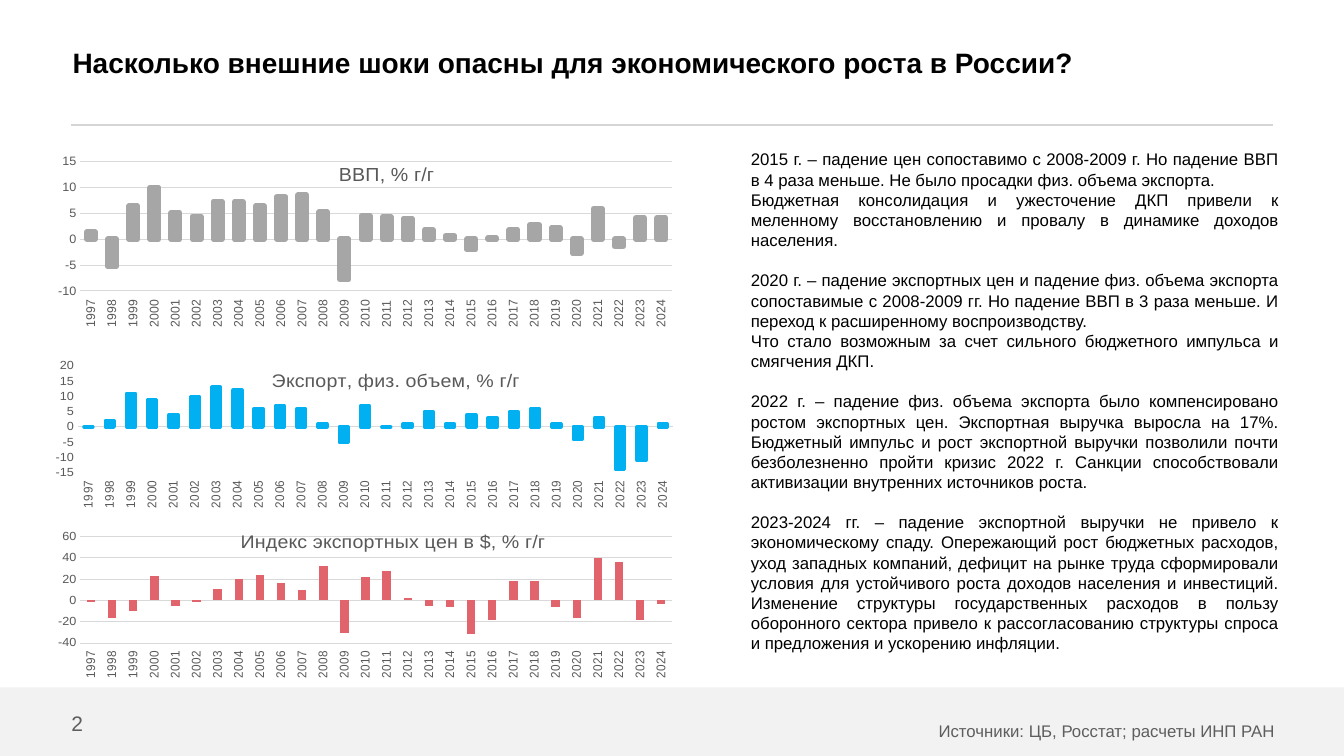
import dataclasses
from typing import Any, Optional

import lxml.etree
import pptx
import pptx.chart.data
import pptx.dml.color
import pptx.enum.chart
import pptx.enum.shapes
import pptx.enum.text
import pptx.oxml.ns
import pptx.util

Pt = pptx.util.Pt
RGBColor = pptx.dml.color.RGBColor
Align = pptx.enum.text.PP_ALIGN
Anchor = pptx.enum.text.MSO_ANCHOR
qn = pptx.oxml.ns.qn

BLACK = RGBColor(0x00, 0x00, 0x00)
WHITE = RGBColor(0xFF, 0xFF, 0xFF)
RULE_GRAY = RGBColor(0xD5, 0xD5, 0xD5)
FOOTER_GRAY = RGBColor(0xF2, 0xF2, 0xF2)
FOOTER_TEXT = RGBColor(0x5E, 0x5E, 0x5E)
CHART_TEXT = RGBColor(0x59, 0x59, 0x59)
GRID_GRAY = RGBColor(0xD9, 0xD9, 0xD9)
GDP_GRAY = RGBColor(0xA6, 0xA6, 0xA6)
EXPORT_BLUE = RGBColor(0x00, 0xB0, 0xF0)
PRICE_RED = RGBColor(0xE1, 0x63, 0x6C)

FONT = "Arial"
YEARS = [str(year) for year in range(1997, 2025)]
CHART_WIDTH = 501.8
LINE_PITCH = 14.4


@dataclasses.dataclass(frozen=True)
class GrowthChart:
    title: str
    title_position: tuple[float, float]
    left: float
    top: float
    height: float
    plot_left: float
    plot_width: float
    axis: dict[str, Any]
    color: RGBColor
    outline: Optional[float]
    values: list[float]


CHARTS = [
    GrowthChart(
        "ВВП, % г/г", (0.43, 0.08), 23.8, 103, 131, 0.067, 0.842,
        {"minimum_scale": -10, "maximum_scale": 15, "major_unit": 5, "has_major_gridlines": True},
        GDP_GRAY, 4,
        [1.4, -5.3, 6.4, 10, 5.1, 4.4, 7.3, 7.2, 6.4, 8.2, 8.5, 5.2, -7.8, 4.5,
         4.3, 4, 1.8, 0.7, -2, 0.2, 1.8, 2.8, 2.2, -2.7, 5.9, -1.4, 4.1, 4.1]),
    GrowthChart(
        "Экспорт, физ. объем, % г/г", (0.32, 0.09), 31, 251.3, 111.6, 0.049, 0.848,
        {"minimum_scale": -15, "maximum_scale": 20, "major_unit": 5, "has_major_gridlines": False},
        EXPORT_BLUE, 2.75,
        [0, 2, 11, 9, 4, 10, 13, 12, 6, 7, 6, 1, -5, 7,
         0, 1, 5, 1, 4, 3, 5, 6, 1, -4, 3, -14, -11, 1]),
    GrowthChart(
        "Индекс экспортных цен в $, % г/г", (0.29, 0.03), 23.8, 373, 111.6, 0.067, 0.842,
        {"minimum_scale": -40, "maximum_scale": 60, "major_unit": 20, "has_major_gridlines": True},
        PRICE_RED, None,
        [-2, -17, -10, 23, -5, -2, 11, 20, 24, 16, 10, 32, -31, 22,
         28, 2, -5, -6, -32, -18, 18, 18, -6, -17, 40, 36, -18, -3]),
]

# Each inner list is one block of commentary; blocks are set apart by a line.
COMMENTARY = [
    ["2015 г. – падение цен сопоставимо с 2008-2009 г. Но падение ВВП в 4 раза меньше. "
     "Не было просадки физ. объема экспорта.",
     "Бюджетная консолидация и ужесточение ДКП привели к меленному восстановлению "
     "и провалу в динамике доходов населения."],
    ["2020 г. – падение экспортных цен и падение физ. объема экспорта сопоставимые "
     "с 2008-2009 гг. Но падение ВВП в 3 раза меньше. И переход к расширенному воспроизводству.",
     "Что стало возможным за счет сильного бюджетного импульса и смягчения ДКП."],
    ["2022 г. – падение физ. объема экспорта было компенсировано ростом экспортных цен. "
     "Экспортная выручка выросла на 17%. Бюджетный импульс и рост экспортной выручки "
     "позволили почти безболезненно пройти кризис 2022 г. Санкции способствовали "
     "активизации внутренних источников роста."],
    ["2023-2024 гг. – падение экспортной выручки не привело к экономическому спаду. "
     "Опережающий рост бюджетных расходов, уход западных компаний, дефицит на рынке труда "
     "сформировали условия для устойчивого роста доходов населения и инвестиций. "
     "Изменение структуры государственных расходов в пользу оборонного сектора привело "
     "к рассогласованию структуры спроса и предложения и ускорению инфляции."],
]


def apply_format(target: Any, values: dict[str, Any]) -> None:
    for name, value in values.items():
        setattr(target, name, value)


def format_font(font: Any, size: float, color: RGBColor, bold: bool = False) -> None:
    apply_format(font, {"name": FONT, "size": Pt(size), "bold": bold})
    font.color.rgb = color


def place(shape: Any, left: float, top: float, width: float, height: float) -> None:
    apply_format(shape, {"left": Pt(left), "top": Pt(top), "width": Pt(width), "height": Pt(height)})


def format_frame(frame: Any, anchor: Any, margin: float = 0, wrap: bool = True) -> None:
    sides = ("margin_left", "margin_top", "margin_right", "margin_bottom")
    apply_format(frame, {side: Pt(margin) for side in sides})
    apply_format(frame, {"vertical_anchor": anchor, "word_wrap": wrap,
                         "auto_size": pptx.enum.text.MSO_AUTO_SIZE.NONE})


def set_layout(parent: Any, index: int, values: dict[str, Any]) -> None:
    """Give a chart part a manual layout, as fractions of the chart."""
    for old in parent.findall(qn("c:layout")):
        parent.remove(old)
    layout = lxml.etree.Element(qn("c:layout"))
    manual = lxml.etree.SubElement(layout, qn("c:manualLayout"))
    for name, value in values.items():
        lxml.etree.SubElement(manual, qn(f"c:{name}")).set("val", str(value))
    parent.insert(index, layout)


def add_growth_chart(slide: Any, item: GrowthChart) -> None:
    data = pptx.chart.data.CategoryChartData(number_format="0")
    data.categories = YEARS
    data.add_series(item.title, item.values)
    chart = slide.shapes.add_chart(
        pptx.enum.chart.XL_CHART_TYPE.COLUMN_CLUSTERED,
        Pt(item.left), Pt(item.top), Pt(CHART_WIDTH), Pt(item.height), data).chart
    chart.has_legend = False
    format_font(chart.font, 10, BLACK)

    paragraph = chart.chart_title.text_frame.paragraphs[0]
    paragraph.text = item.title
    format_font(paragraph.runs[0].font, 14, CHART_TEXT)
    chart.chart_title.include_in_layout = True
    title = chart.chart_title._element
    title.find(qn("c:overlay")).set("val", "1")
    x, y = item.title_position
    set_layout(title, 1, {"xMode": "edge", "yMode": "edge", "x": x, "y": y})
    set_layout(chart._chartSpace.chart.plotArea, 0, {
        "layoutTarget": "inner", "xMode": "edge", "yMode": "edge",
        "x": item.plot_left, "y": 0.098, "w": item.plot_width, "h": 0.732})

    category, value = chart.category_axis, chart.value_axis
    for axis in (category, value):
        axis.major_tick_mark = pptx.enum.chart.XL_TICK_MARK.NONE
        format_font(axis.tick_labels.font, 9, CHART_TEXT)
    category.tick_label_position = pptx.enum.chart.XL_TICK_LABEL_POSITION.LOW
    category._element.find(qn("c:txPr")).find(qn("a:bodyPr")).set("rot", "-5400000")
    apply_format(value, item.axis)
    apply_format(value.tick_labels, {"number_format": "0", "number_format_is_linked": False})
    value.format.line.fill.background()
    lines = [category.format.line]
    if value.has_major_gridlines:
        lines.append(value.major_gridlines.format.line)
    for line in lines:
        line.color.rgb = GRID_GRAY
        line.width = Pt(0.75)

    plot = chart.plots[0]
    apply_format(plot, {"gap_width": 150, "vary_by_categories": False})
    series = plot.series[0]
    series.invert_if_negative = False
    series.format.fill.solid()
    series.format.fill.fore_color.rgb = item.color
    if item.outline:
        series.format.line.color.rgb = item.color
        series.format.line.width = Pt(item.outline)


def add_frame_lines(slide: Any) -> None:
    """Draw the rule under the title and the footer band."""
    rule = slide.shapes.add_connector(
        pptx.enum.shapes.MSO_CONNECTOR.STRAIGHT, Pt(51), Pt(89.3), Pt(909.4), Pt(89.3))
    rule.line.color.rgb = RULE_GRAY
    rule.line.width = Pt(1.5)
    lxml.etree.SubElement(rule._element.spPr, qn("a:effectLst"))
    band = slide.shapes.add_shape(
        pptx.enum.shapes.MSO_SHAPE.RECTANGLE, Pt(0), Pt(491), Pt(960), Pt(49))
    band.shadow.inherit = False
    band.fill.solid()
    band.fill.fore_color.rgb = FOOTER_GRAY
    band.line.fill.background()


def add_commentary(slide: Any) -> None:
    frame = slide.shapes.add_textbox(Pt(532), Pt(100.8), Pt(386), Pt(371.5)).text_frame
    format_frame(frame, Anchor.MIDDLE, margin=4.3)
    for block_index, block in enumerate(COMMENTARY):
        for index, text in enumerate(block):
            first = block_index == index == 0
            paragraph = frame.paragraphs[0] if first else frame.add_paragraph()
            gap = LINE_PITCH if block_index and index == 0 else 0
            apply_format(paragraph, {"text": text, "alignment": Align.JUSTIFY,
                                     "line_spacing": Pt(LINE_PITCH), "space_before": Pt(gap)})
            format_font(paragraph.font, 12, BLACK)


def fill_placeholders(slide: Any) -> None:
    title, sources = slide.shapes.title, slide.placeholders[1]
    place(title, 51.8, 0, 725, 89.3)
    format_frame(title.text_frame, Anchor.MIDDLE)
    paragraph = title.text_frame.paragraphs[0]
    apply_format(paragraph, {"text": "Насколько внешние шоки опасны для экономического роста в России?",
                             "alignment": Align.LEFT})
    format_font(paragraph.font, 20, BLACK, bold=True)

    place(sources, 154.8, 507.6, 756, 19.4)
    format_frame(sources.text_frame, Anchor.TOP)
    paragraph = sources.text_frame.paragraphs[0]
    apply_format(paragraph, {"text": "Источники: ЦБ, Росстат; расчеты ИНП РАН",
                             "alignment": Align.RIGHT, "line_spacing": 1.5, "space_before": Pt(0)})
    properties = paragraph._p.get_or_add_pPr()
    apply_format(properties, {"marL": 0, "indent": 0}) if hasattr(properties, "marL") else None
    properties.set("marL", "0")
    properties.set("indent", "0")
    lxml.etree.SubElement(properties, qn("a:buNone"))
    format_font(paragraph.font, 12, FOOTER_TEXT)


def add_slide_number(slide: Any) -> None:
    frame = slide.shapes.add_textbox(Pt(51), Pt(507.6), Pt(18.7), Pt(18)).text_frame
    format_frame(frame, Anchor.MIDDLE, wrap=False)
    frame.text = "2"
    format_font(frame.paragraphs[0].font, 15, FOOTER_TEXT)


def main() -> None:
    presentation = pptx.Presentation()
    apply_format(presentation, {"slide_width": Pt(960), "slide_height": Pt(540)})
    slide = presentation.slides.add_slide(presentation.slide_layouts[1])
    slide.background.fill.solid()
    slide.background.fill.fore_color.rgb = WHITE
    add_frame_lines(slide)
    fill_placeholders(slide)
    for item in CHARTS:
        add_growth_chart(slide, item)
    add_commentary(slide)
    add_slide_number(slide)
    # The footer band must lie behind the sources line.
    tree = slide.shapes._spTree
    tree.append(slide.placeholders[1]._element)
    presentation.save("out.pptx")


if __name__ == "__main__":
    main()
